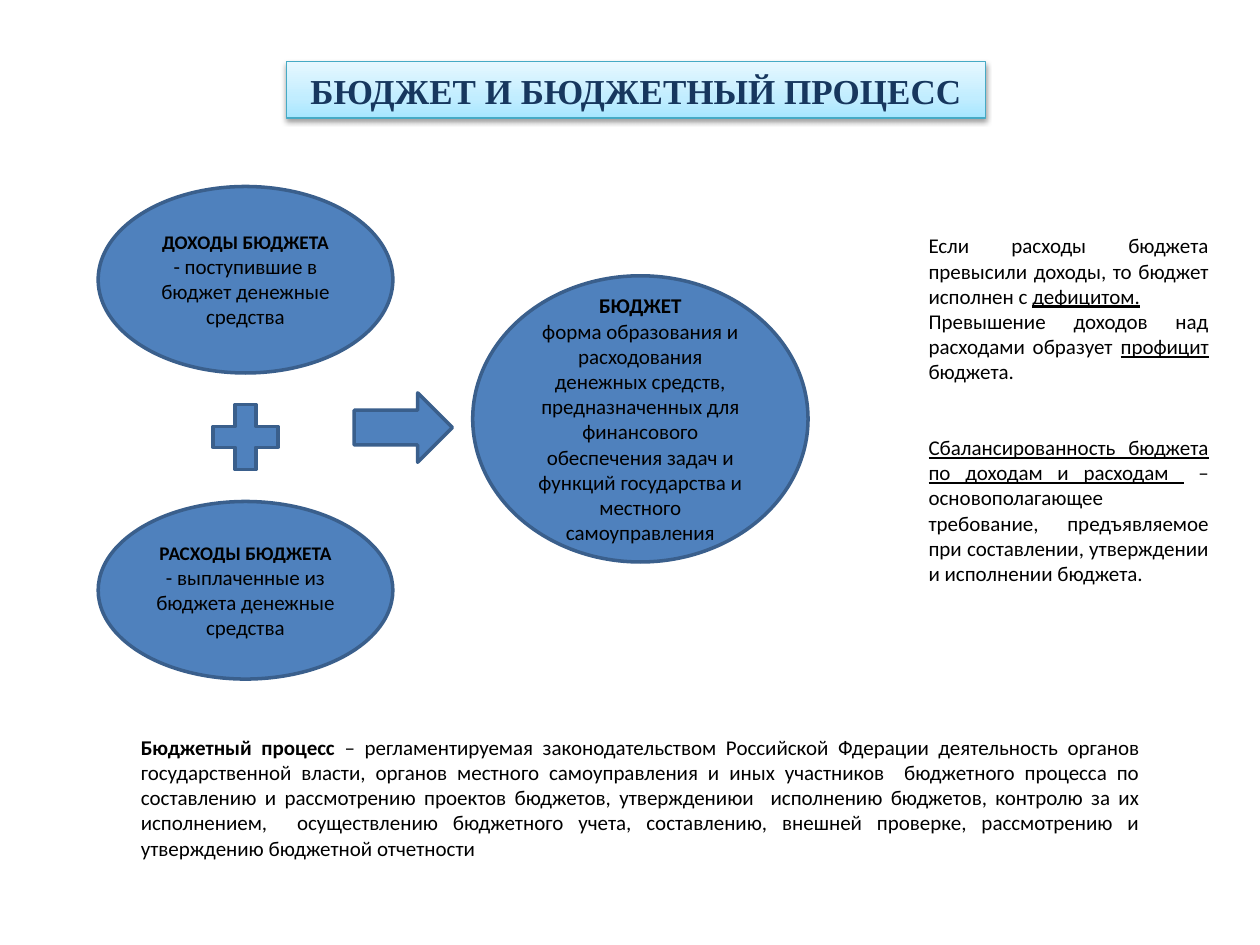
from collections import namedtuple

from lxml.etree import fromstring
from pptx import Presentation
from pptx.dml.color import RGBColor
from pptx.enum.shapes import MSO_SHAPE
from pptx.enum.text import MSO_ANCHOR, MSO_AUTO_SIZE, PP_ALIGN
from pptx.oxml.ns import nsdecls
from pptx.util import Cm, Pt

BLUE = RGBColor(0x4F, 0x81, 0xBD)
DARK_BLUE = RGBColor(0x3A, 0x5F, 0x8C)
NAVY = RGBColor(0x17, 0x37, 0x5E)
TEAL = RGBColor(0x46, 0xAA, 0xC5)
BLACK = RGBColor(0, 0, 0)
TITLE_STOPS = ((0, "A7E6FF"), (35, "C1EDFF"), (100, "E7F8FF"))

Box = namedtuple("Box", "left top width height")
Span = namedtuple("Span", "text bold underline size", defaults=(False, False, 12))

INCOME = [[Span("ДОХОДЫ БЮДЖЕТА", bold=True, size=11)],
          [Span("- поступившие в бюджет денежные средства")]]
EXPENSES = [[Span("РАСХОДЫ БЮДЖЕТА", bold=True, size=11)],
            [Span("- выплаченные из бюджета денежные средства")]]
BUDGET = [[Span("БЮДЖЕТ", bold=True)],
          [Span("форма образования и расходования денежных средств, предназначенных "
                "для финансового обеспечения задач и функций государства и местного "
                "самоуправления")]]
BALANCE = [
    [Span("Если расходы бюджета превысили доходы, то бюджет исполнен с "),
     Span("дефицитом.", underline=True)],
    [Span("Превышение доходов над расходами образует "),
     Span("профицит ", underline=True), Span("бюджета.")],
    [Span("Сбалансированность бюджета по доходам и расходам ", underline=True),
     Span(" – основополагающее требование, предъявляемое при составлении, "
          "утверждении и исполнении бюджета.")],
]
PROCESS = [[
    Span("Бюджетный процесс", bold=True),
    Span(" – регламентируемая законодательством Российской Фдерации деятельность "
         "органов государственной власти, органов местного самоуправления и иных "
         "участников  бюджетного процесса по составлению и рассмотрению проектов "
         "бюджетов, утверждениюи  исполнению бюджетов, контролю за их исполнением,  "
         "осуществлению бюджетного учета, составлению, внешней проверке, рассмотрению "
         "и утверждению бюджетной отчетности"),
]]


def in_cm(box):
    return [Cm(length) for length in box]


def write_paragraphs(frame, paragraphs, align):
    frame.word_wrap = True
    for index, spans in enumerate(paragraphs):
        para = frame.paragraphs[0] if index == 0 else frame.add_paragraph()
        para.alignment = align
        for span in spans:
            run = para.add_run()
            run.text = span.text
            run.font.name = "Calibri"
            run.font.size = Pt(span.size)
            run.font.bold = span.bold
            run.font.underline = span.underline
            run.font.color.rgb = BLACK


def add_blue_shape(slide, kind, box, paragraphs=()):
    shape = slide.shapes.add_shape(kind, *in_cm(box))
    shape.shadow.inherit = False
    shape.fill.solid()
    shape.fill.fore_color.rgb = BLUE
    shape.line.color.rgb = DARK_BLUE
    shape.line.width = Pt(2)
    shape.text_frame.vertical_anchor = MSO_ANCHOR.MIDDLE
    write_paragraphs(shape.text_frame, paragraphs, PP_ALIGN.CENTER)
    return shape


def add_text(slide, box, paragraphs):
    frame = slide.shapes.add_textbox(*in_cm(box)).text_frame
    write_paragraphs(frame, paragraphs, PP_ALIGN.JUSTIFY)
    return frame


def add_title(slide, box):
    title = slide.shapes.title
    title.left, title.top, title.width, title.height = in_cm(box)
    stops = "".join(f'<a:gs pos="{position * 1000}"><a:srgbClr val="{color}"/></a:gs>'
                    for position, color in TITLE_STOPS)
    properties = title.element.spPr
    properties.append(fromstring(
        f'<a:gradFill {nsdecls("a")} rotWithShape="1"><a:gsLst>{stops}</a:gsLst>'
        '<a:lin ang="16200000" scaled="0"/></a:gradFill>'))
    title.line.color.rgb = TEAL
    title.line.width = Pt(0.75)
    properties.append(fromstring(
        f'<a:effectLst {nsdecls("a")}><a:outerShdw blurRad="{Pt(3.1)}" '
        f'dist="{Pt(1.6)}" dir="5400000" rotWithShape="0"><a:srgbClr val="000000">'
        '<a:alpha val="38000"/></a:srgbClr></a:outerShdw></a:effectLst>'))

    frame = title.text_frame
    frame.text = "БЮДЖЕТ И БЮДЖЕТНЫЙ ПРОЦЕСС"
    frame.auto_size = MSO_AUTO_SIZE.NONE
    frame.vertical_anchor = MSO_ANCHOR.TOP
    frame.margin_left = frame.margin_right = frame.margin_top = frame.margin_bottom = 0
    para = frame.paragraphs[0]
    para.alignment = PP_ALIGN.CENTER
    para.line_spacing = Pt(28.8)
    font = para.runs[0].font
    font.name = "Times New Roman"
    font.size = Pt(20)
    font.bold = True
    font.color.rgb = NAVY


def add_budget_diagram(slide, box):
    """Income plus expenses on the left, an arrow, and the budget on the right."""
    left, top, width, height = box
    part_width, plus_size, budget_width = 5.94, 1.78, 6.76
    sign_top = top + 4.16
    add_blue_shape(slide, MSO_SHAPE.OVAL, Box(left, top, part_width, 3.76), INCOME)
    add_blue_shape(slide, MSO_SHAPE.OVAL,
                   Box(left, top + height - 3.58, part_width, 3.58), EXPENSES)
    plus_left = left + (part_width - plus_size) / 2
    plus = add_blue_shape(slide, MSO_SHAPE.MATH_PLUS,
                          Box(plus_left, sign_top, plus_size, plus_size))
    plus.adjustments[0] = 0.235
    add_blue_shape(slide, MSO_SHAPE.RIGHT_ARROW, Box(left + 5.16, sign_top, 1.98, 1.4))
    add_blue_shape(slide, MSO_SHAPE.OVAL,
                   Box(left + width - budget_width, top + 1.8, budget_width, 5.77), BUDGET)


def add_balance_notes(slide, box):
    frame = add_text(slide, box, BALANCE)
    frame.paragraphs[-1].space_before = Pt(28.8)


def main():
    deck = Presentation()
    deck.slide_width, deck.slide_height = Cm(25.4), Cm(19.05)
    slide = deck.slides.add_slide(deck.slide_layouts[5])
    add_title(slide, Box(5.77, 1.24, 14.1, 1.14))
    add_budget_diagram(slide, Box(1.98, 3.76, 14.31, 9.93))
    add_balance_notes(slide, Box(18.47, 4.57, 6.15, 7.44))
    add_text(slide, Box(2.59, 14.68, 20.65, 2.82), PROCESS)
    deck.save("out.pptx")


if __name__ == "__main__":
    main()
